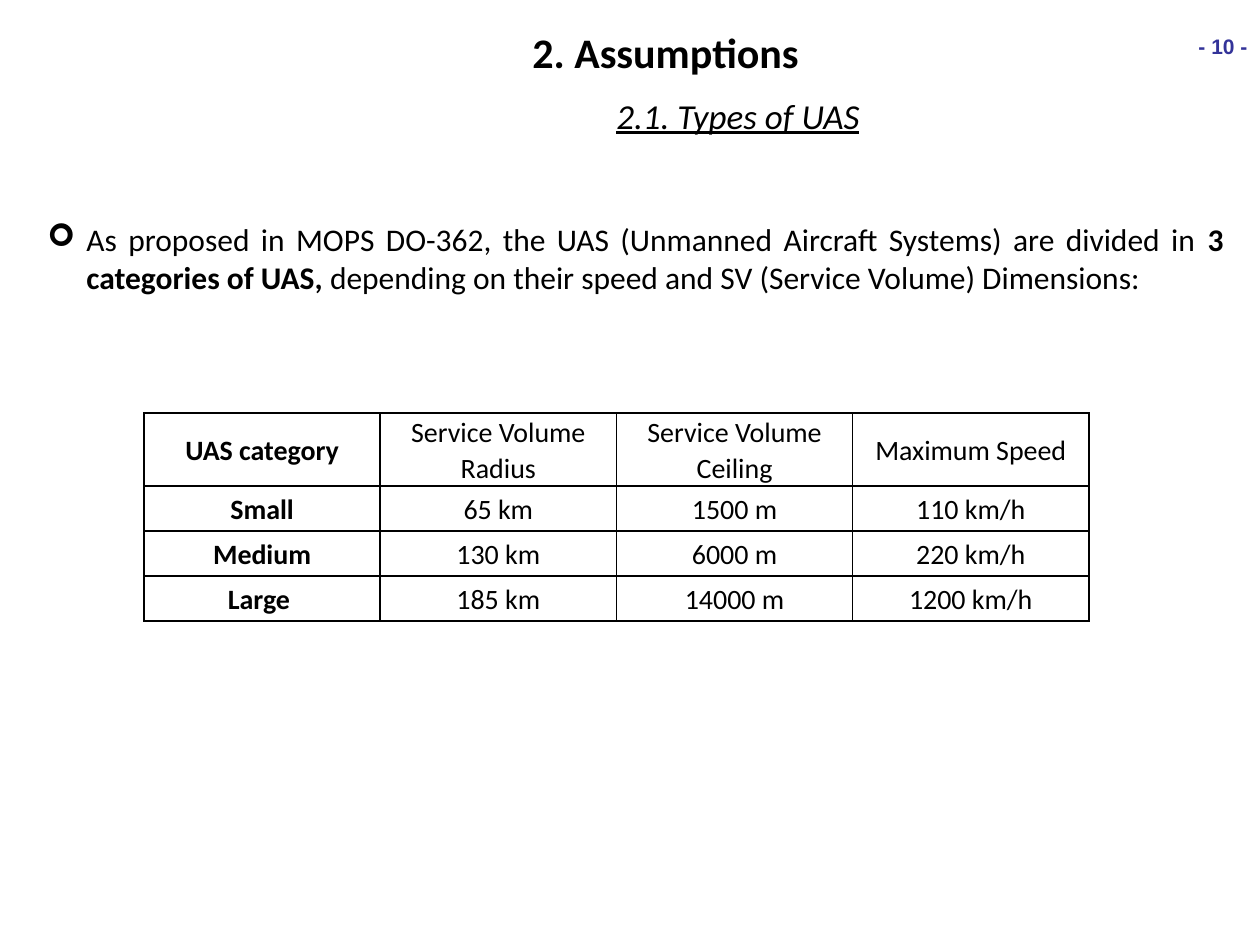
from dataclasses import dataclass

from lxml.etree import SubElement
from pptx import Presentation
from pptx.dml.color import RGBColor
from pptx.enum.text import MSO_ANCHOR, MSO_AUTO_SIZE, PP_ALIGN
from pptx.oxml.ns import qn
from pptx.util import Pt

PX = 7257  # EMU per pixel, 126 pixels to the inch


@dataclass(frozen=True)
class Theme:
    face: str = "Calibri"
    mark: str = "Arial"
    ink: str = "000000"
    blue: str = "333399"
    paper: str = "FFFFFF"
    title: int = 24
    sub: int = 20
    body: int = 18
    cell: int = 16
    page: int = 12


THEME = Theme()
ROWS = [
    ("UAS category", "Service Volume Radius", "Service Volume Ceiling", "Maximum Speed"),
    ("Small", "65 km", "1500 m", "110 km/h"),
    ("Medium", "130 km", "6000 m", "220 km/h"),
    ("Large ", "185 km", "14000 m", "1200 km/h"),
]


def scale(*lengths):
    return [n * PX for n in lengths]


def style(font, size, face=THEME.face, color=THEME.ink, bold=False):
    font.name, font.size, font.bold = face, Pt(size), bold
    font.color.rgb = RGBColor.from_string(color)


def add_text(slide, box, align, wrap=True):
    """Add an empty text box and return its first paragraph."""
    frame = slide.shapes.add_textbox(*scale(*box)).text_frame
    frame.word_wrap = wrap
    frame.auto_size = MSO_AUTO_SIZE.SHAPE_TO_FIT_TEXT
    para = frame.paragraphs[0]
    para.alignment = align
    return para


def add_page(slide, box):
    para = add_text(slide, box, PP_ALIGN.RIGHT, wrap=False)
    para.text = "- 10 -"
    style(para.font, THEME.page, THEME.mark, THEME.blue, bold=True)


def add_title(slide, box):
    para = add_text(slide, box, PP_ALIGN.LEFT, wrap=False)
    para.text = "2. Assumptions"
    style(para.font, THEME.title, bold=True)


def add_subtitle(slide, box):
    para = add_text(slide, box, PP_ALIGN.JUSTIFY)
    para.text = "2.1. Types of UAS"
    style(para.font, THEME.sub)
    para.font.italic = para.font.underline = True


def add_bullet(para, indent):
    props = para._p.get_or_add_pPr()
    props.set("marL", str(indent * PX))
    props.set("indent", str(-indent * PX))
    SubElement(props, qn("a:buFont"), typeface="Wingdings")
    SubElement(props, qn("a:buChar"), char="➢")


def add_intro(slide, box):
    para = add_text(slide, box, PP_ALIGN.JUSTIFY)
    add_bullet(para, 39)
    para.space_after = Pt(24)
    style(para.font, THEME.body)
    for text, bold in (
        ("As proposed in MOPS DO-362, the UAS (Unmanned Aircraft Systems) are divided in ", False),
        ("3 categories of UAS, ", True),
        ("depending on their speed and SV (Service Volume) Dimensions:", False),
    ):
        run = para.add_run()
        run.text = text
        run.font.bold = bold


def add_borders(cell):
    props = cell._tc.get_or_add_tcPr()
    for place, side in enumerate(("lnL", "lnR", "lnT", "lnB")):
        line = props.makeelement(qn(f"a:{side}"), {"w": str(Pt(1))})
        fill = SubElement(line, qn("a:solidFill"))
        SubElement(fill, qn("a:srgbClr"), val=THEME.ink)
        props.insert(place, line)


def fill_cell(cell, text, bold):
    cell.fill.solid()
    cell.fill.fore_color.rgb = RGBColor.from_string(THEME.paper)
    add_borders(cell)
    cell.vertical_anchor = MSO_ANCHOR.MIDDLE
    cell.margin_left = cell.margin_right = 9 * PX
    cell.margin_top = cell.margin_bottom = 0
    para = cell.text_frame.paragraphs[0]
    para.text = text
    para.alignment = PP_ALIGN.CENTER
    para.line_spacing = 1.07
    style(para.font, THEME.cell, bold=bold)


def add_types(slide, box, head=73):
    """Add the table of categories; the rows below the head share its height."""
    count, width, height = len(ROWS), box[2], box[3]
    table = slide.shapes.add_table(count, len(ROWS[0]), *scale(*box)).table
    for col in table.columns:
        col.width = width * PX // len(ROWS[0])
    for r, texts in enumerate(ROWS):
        table.rows[r].height = (height - head) * PX // (count - 1) if r else head * PX
        for c, text in enumerate(texts):
            fill_cell(table.cell(r, c), text, bold=c == 0)


def main():
    deck = Presentation()
    deck.slide_width, deck.slide_height = scale(1260, 945)
    slide = deck.slides.add_slide(deck.slide_layouts[6])
    add_page(slide, (1170, 27, 90, 38))
    add_title(slide, (520, 20, 295, 63))
    add_subtitle(slide, (604, 88, 631, 55))
    add_intro(slide, (35, 214, 1201, 89))
    add_types(slide, (144, 413, 945, 208))
    deck.save("out.pptx")


if __name__ == "__main__":
    main()
